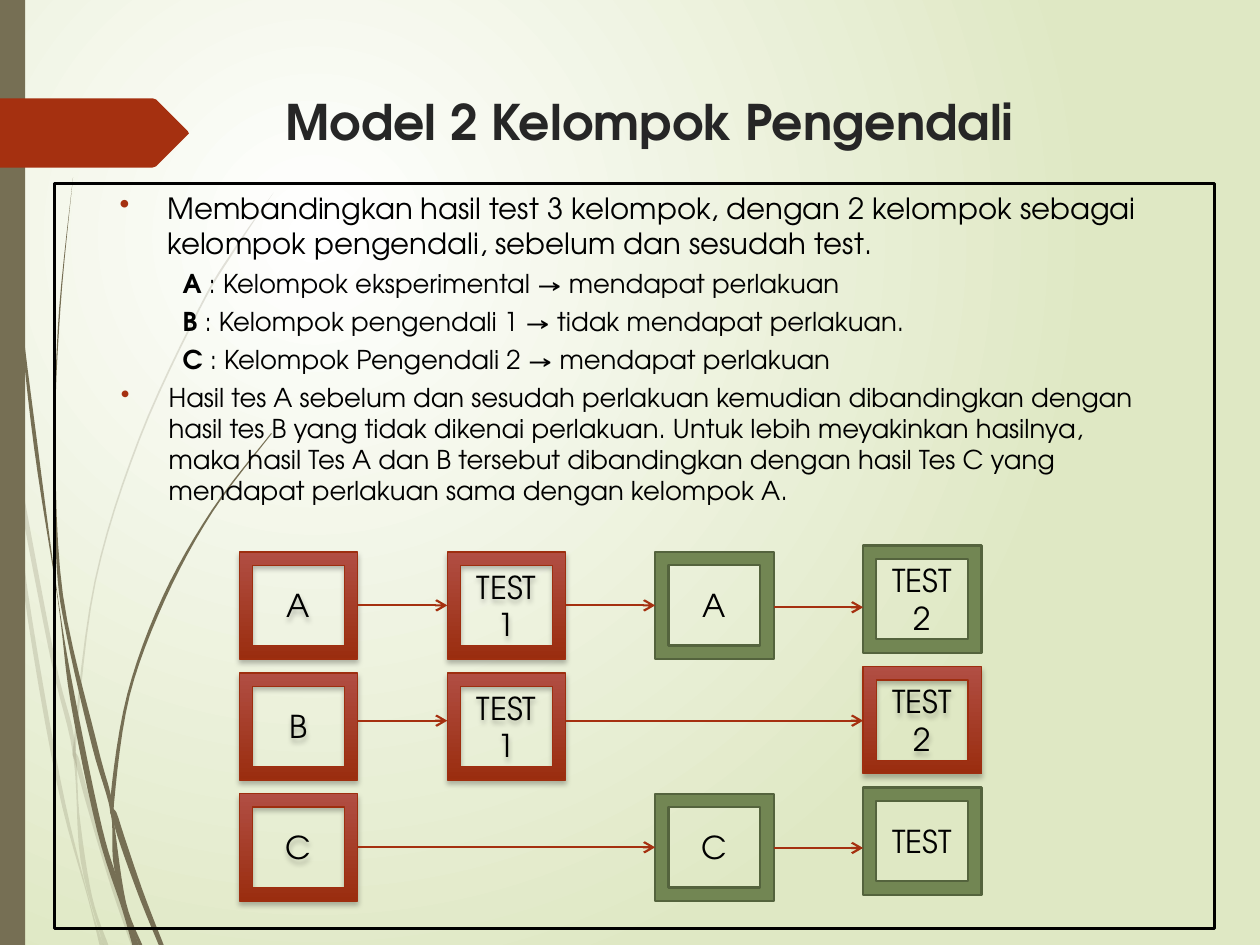
from lxml import etree
from pptx import Presentation
from pptx.dml.color import RGBColor
from pptx.enum.shapes import MSO_CONNECTOR, MSO_SHAPE
from pptx.enum.text import MSO_ANCHOR, PP_ALIGN
from pptx.oxml.ns import qn
from pptx.util import Inches, Pt

RECT, FRAME = MSO_SHAPE.RECTANGLE, MSO_SHAPE.FRAME
LINE = MSO_CONNECTOR.STRAIGHT
MID, TOP = MSO_ANCHOR.MIDDLE, MSO_ANCHOR.TOP
LEFT, CENTER = PP_ALIGN.LEFT, PP_ALIGN.CENTER

FONT = "TeX Gyre Adventor"
BLACK = RGBColor(0x00, 0x00, 0x00)
INK = RGBColor(0x26, 0x26, 0x26)
WHITE = RGBColor(0xFF, 0xFF, 0xFF)
LIME = RGBColor(0xDF, 0xE8, 0xC4)
BROWN = RGBColor(0x76, 0x6F, 0x54)
RUST = RGBColor(0xA5, 0x30, 0x10)
ROSE = RGBColor(0xB1, 0x4E, 0x43)
BRICK = RGBColor(0x9A, 0x2D, 0x0F)
EDGE = RGBColor(0x9E, 0x2E, 0x0F)
GREEN = RGBColor(0x72, 0x86, 0x53)
MOSS = RGBColor(0x54, 0x63, 0x3D)


def add(parent, tag, **attrs):
    return etree.SubElement(parent, qn(tag), attrs)


def bend(edge, steps=6):
    """Points of a smooth curve through the points of one edge."""
    pts = [edge[0], *edge, edge[-1]]
    curve = []
    for a, b, c, d in zip(pts, pts[1:], pts[2:], pts[3:]):
        for n in range(steps):
            t = n / steps
            curve.append(tuple(
                q + t * (r - p) / 2 + t**2 * (2 * p - 5 * q + 4 * r - s) / 2
                + t**3 * (3 * q - p - 3 * r + s) / 2
                for p, q, r, s in zip(a, b, c, d)))
    return curve + [edge[-1]]


deck = Presentation()
deck.slide_width, deck.slide_height = Inches(10), Inches(7.5)
slide = deck.slides.add_slide(deck.slide_layouts[6])
shapes = slide.shapes

# Background glow, brightest in the upper left
back = slide.background.fill
back.gradient()
for stop, hue in zip(back.gradient_stops, (WHITE, LIME)):
    stop.color.rgb = hue
grad = slide.element.find(".//" + qn("a:gradFill"))
grad.remove(grad.find(qn("a:lin")))
glow = add(grad, "a:path", path="circle")
add(glow, "a:fillToRect", l="50000", t="50000", r="100000", b="100000")

# Grass stems: opacity in percent, left edge downwards, right edge upwards
STEMS = [
    (20, [(0, 2.99), (0.08, 3.5), (0.19, 4.7), (0.45, 6.21), (0.7, 7.14), (0.79, 7.5)],
     [(0.82, 7.5), (0.7, 7.11), (0.48, 6.19), (0.22, 4.69), (0.12, 3.76), (0, 2.82)]),
    (20, [(0.1, 3.45), (0.12, 3.76), (0.4, 5.22), (0.58, 5.99), (0.64, 6.83), (0.82, 7.5)],
     [(0.86, 7.5), (0.73, 7.11), (0.63, 6.46), (0.59, 5.86), (0.43, 5.2), (0.1, 3.45)]),
    (20, [(2.17, 1.53), (1.86, 1.97), (1.58, 2.44), (1.1, 3.48), (0.75, 4.61),
          (0.59, 5.84), (0.61, 6.1), (0.85, 6.94), (1.04, 7.5)],
     [(1.08, 7.5), (0.88, 6.92), (0.64, 6.07), (0.61, 5.84), (0.76, 4.62),
      (1.11, 3.49), (1.59, 2.45), (1.87, 1.98), (2.17, 1.53)]),
    (100, [(0.02, 0), (0.05, 1.1), (0.14, 2.33), (0.27, 3.55), (0.46, 4.77),
           (0.56, 5.57), (0.77, 6.59), (0.97, 7.22), (1.05, 7.5)],
     [(1.1, 7.5), (0.96, 7.06), (0.81, 6.57), (0.6, 5.56), (0.47, 4.81),
      (0.3, 3.55), (0.15, 2.32), (0.06, 1.09), (0.03, 0)]),
    (100, [(0.58, 1.41), (0.47, 2.45), (0.43, 3.49), (0.45, 4.49), (0.53, 5.05),
           (0.73, 5.92), (0.88, 6.45), (0.91, 6.91), (1.1, 7.5)],
     [(1.13, 7.5), (1, 7.16), (0.91, 6.56), (0.88, 6.31), (0.77, 5.9),
      (0.5, 4.72), (0.44, 3.49), (0.48, 2.45), (0.58, 1.41)]),
    (100, [(2.15, 3.44), (1.68, 4.05), (1.29, 4.74), (1.01, 5.51), (0.88, 6.31),
           (0.91, 6.56), (1.09, 7.08), (1.26, 7.5)],
     [(1.3, 7.5), (1.13, 7.06), (0.94, 6.49), (0.91, 6.33), (1.03, 5.52),
      (1.31, 4.76), (1.69, 4.06), (2.16, 3.44)]),
]
TAG = [(0, 0.78), (1.21, 0.78), (1.24, 0.79), (1.49, 1.04), (1.5, 1.06),
       (1.49, 1.07), (1.24, 1.32), (1.21, 1.33), (0, 1.33)]
forms = [(bend(down) + bend(up), BROWN, share) for share, down, up in STEMS]
forms += [(None, BROWN, 100), (TAG, RUST, 100)]
for pts, hue, share in forms:
    if pts:
        start, *rest = [(Inches(x), Inches(y)) for x, y in pts]
        pen = shapes.build_freeform(*start)
        pen.add_line_segments(rest)
        form = pen.convert_to_shape()
    else:  # side bar
        form = shapes.add_shape(RECT, 0, 0, Inches(0.2), deck.slide_height)
    form.shadow.inherit = False
    form.fill.solid()
    form.fill.fore_color.rgb = hue
    form.line.fill.background()
    if share < 100:
        tint = form.element.spPr.find(".//" + qn("a:srgbClr"))
        add(tint, "a:alpha", val=str(share * 1000))

# Title and body: (bulleted, left margin, space before, size, bold lead, rest)
NOTES = [
    (True, 0.38, 0, 16.7, "", "Membandingkan hasil test 3 kelompok, dengan 2 kelompok "
     "sebagai kelompok pengendali, sebelum dan sesudah test."),
    (False, 0.5, 4, 14.8, "A", " : Kelompok eksperimental → mendapat perlakuan"),
    (False, 0.5, 4, 14.8, "B", " : Kelompok pengendali 1 → tidak mendapat perlakuan."),
    (False, 0.5, 4, 14.8, "C", " : Kelompok Pengendali 2 → mendapat perlakuan"),
    (True, 0.39, 4, 14.8, "", "Hasil tes A sebelum dan sesudah perlakuan kemudian "
     "dibandingkan dengan hasil tes B yang tidak dikenai perlakuan. Untuk lebih "
     "meyakinkan hasilnya, maka hasil Tes A dan B tersebut dibandingkan dengan hasil "
     "Tes C yang mendapat perlakuan sama dengan kelompok A."),
]
HEAD = [(False, 0, 0, 28, "Model 2 Kelompok Pengendali", "")]
for place, hue, lines in (((2.17, 0.68, 7.17, 0.67), INK, HEAD),
                          ((0.85, 1.46, 8.29, 2.68), BLACK, NOTES)):
    frame = shapes.add_textbox(*map(Inches, place)).text_frame
    frame.word_wrap = True
    frame.vertical_anchor = TOP
    for n, (dot, left, gap, size, lead, rest) in enumerate(lines):
        para = frame.add_paragraph() if n else frame.paragraphs[0]
        para.alignment = LEFT
        para.space_before = Pt(gap)
        props = para._p.get_or_add_pPr()
        props.set("marL", str(Inches(left)))
        props.set("indent", str(Inches(-0.38) if dot else 0))
        if dot:
            add(add(props, "a:buClr"), "a:srgbClr", val=str(RUST))
            add(props, "a:buChar", char="•")
        for words, bold in ((lead, True), (rest, False)):
            if words:
                run = para.add_run()
                run.text = words
                run.font.name, run.font.size, run.font.bold = FONT, Pt(size), bold
                run.font.color.rgb = hue

# Test design: a grid of four columns and three rows, the last column slightly raised
X, Y, DX, DY, WIDE, HIGH, LIFT = 1.9, 4.38, 1.65, 0.96, 0.94, 0.85, 0.05
CELLS = [  # row, column, text, red
    (0, 0, "A", True), (0, 1, "TEST\n1", True), (0, 2, "A", False), (0, 3, "TEST\n2", False),
    (1, 0, "B", True), (1, 1, "TEST\n1", True), (1, 3, "TEST 2", True),
    (2, 0, "C", True), (2, 2, "C", False), (2, 3, "TEST", False),
]
boxes = {}
for row, col, text, red in CELLS:
    top = Y + row * DY - (LIFT if col == 3 else 0)
    box = shapes.add_shape(FRAME, *map(Inches, (X + col * DX, top, WIDE, HIGH)))
    boxes[row, col] = box
    box.shadow.inherit = False
    if red:
        box.fill.gradient()
        box.fill.gradient_angle = 270
        for stop, hue in zip(box.fill.gradient_stops, (ROSE, BRICK)):
            stop.color.rgb = hue
        effects = box.element.spPr.find(qn("a:effectLst"))
        shade = add(effects, "a:outerShdw", blurRad=str(Pt(3)), dist=str(Pt(2)),
                    dir="5400000", rotWithShape="0")
        add(add(shade, "a:srgbClr", val=str(BLACK)), "a:alpha", val="25000")
    else:
        box.fill.solid()
        box.fill.fore_color.rgb = GREEN
    box.line.color.rgb = EDGE if red else MOSS
    box.line.width = Pt(0.75 if red else 1.25)
    box.text_frame.text = text
    box.text_frame.vertical_anchor = MID
    for para in box.text_frame.paragraphs:
        para.alignment = CENTER
        para.font.name, para.font.size = FONT, Pt(18)
        para.font.color.rgb = BLACK

# Arrows: row, from column, to column, height
for row, start, end, y in ((0, 0, 1, 4.8), (0, 1, 2, 4.8), (0, 2, 3, 4.82), (1, 0, 1, 5.72),
                           (1, 1, 3, 5.72), (2, 0, 2, 6.72), (2, 2, 3, 6.73)):
    arrow = shapes.add_connector(LINE, Inches(X + start * DX + WIDE), Inches(y),
                                 Inches(X + end * DX), Inches(y))
    if row != 1 and end < 3:
        arrow.begin_connect(boxes[row, start], 3)
        arrow.end_connect(boxes[row, end], 1)
    arrow.line.color.rgb = RUST
    arrow.line.width = Pt(1.25)
    add(arrow.line._get_or_add_ln(), "a:tailEnd", type="arrow")
    add(arrow.element.spPr, "a:effectLst")

border = shapes.add_shape(RECT, *map(Inches, (0.43, 1.46, 9.21, 5.91)))
border.shadow.inherit = False
border.fill.background()
border.line.color.rgb = BLACK
border.line.width = Pt(1.75)

deck.save("out.pptx")
